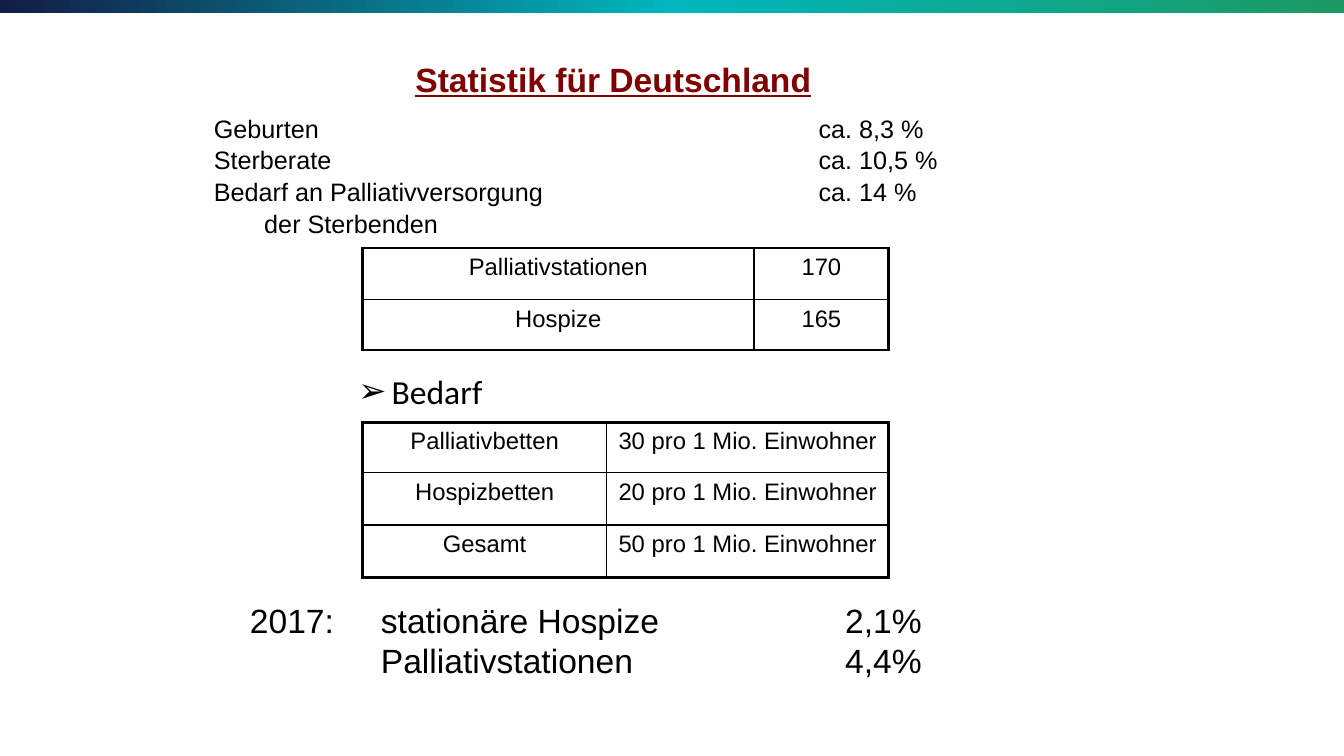
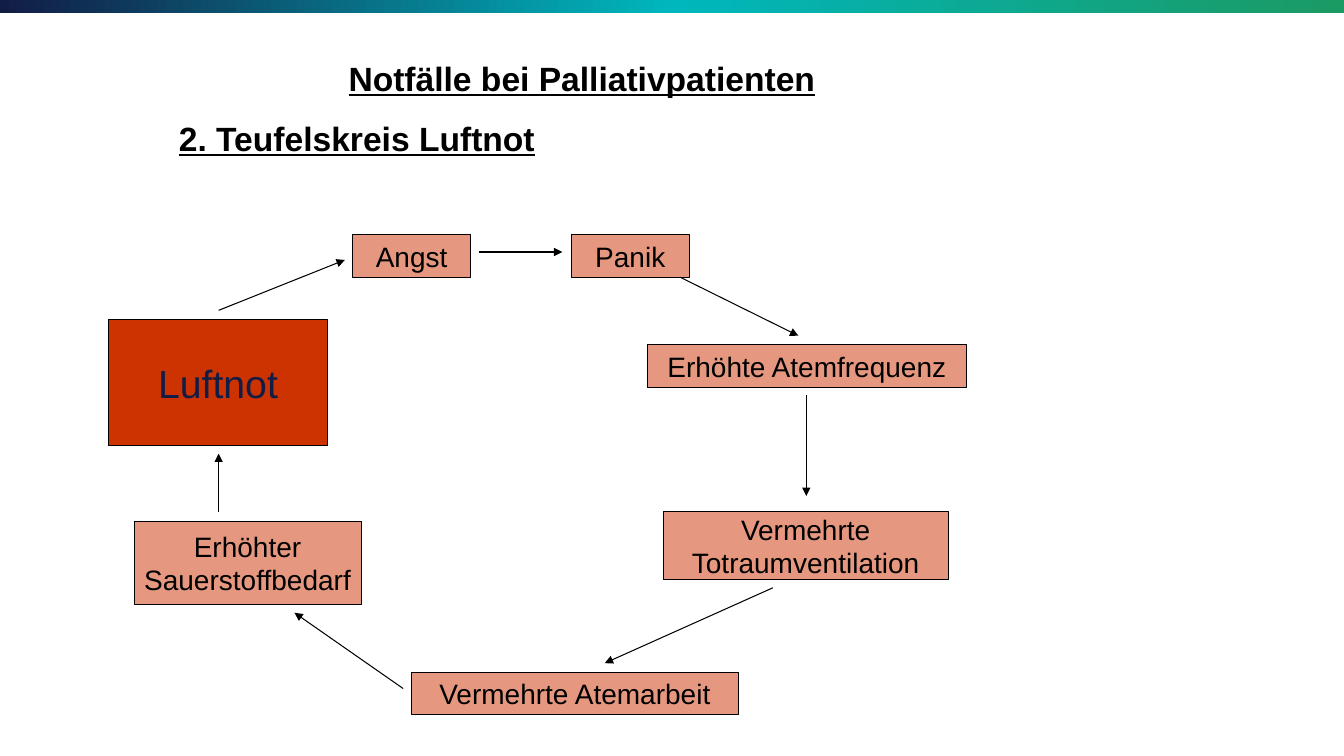
import copy

import lxml.etree
import pptx
import pptx.dml.color
import pptx.enum.shapes
import pptx.enum.text
import pptx.oxml.ns
import pptx.util

Cm = pptx.util.Cm
Pt = pptx.util.Pt
RGBColor = pptx.dml.color.RGBColor
qn = pptx.oxml.ns.qn
ALIGN = pptx.enum.text.PP_ALIGN
RECTANGLE = pptx.enum.shapes.MSO_SHAPE.RECTANGLE

BLACK = RGBColor(0x00, 0x00, 0x00)
MAROON = RGBColor(0x80, 0x00, 0x00)
NAVY = RGBColor(0x12, 0x1D, 0x46)
TURQUOISE = RGBColor(0x00, 0xB7, 0xBD)
GREEN = RGBColor(0x1B, 0x9A, 0x63)
RED = RGBColor(0xCC, 0x33, 0x00)

SLIDE_WIDTH = Cm(33.87)
INSET = Cm(0.13)
THIN, THICK = Pt(1), Pt(2.25)


def add_child(parent, tag, **attributes):
    child = lxml.etree.SubElement(parent, qn(tag))
    for name, value in attributes.items():
        child.set(name, str(value))
    return child


def add_text(slide, left, top, width, height, lines, size, color=BLACK,
             font="Arial", tabs=(), bullet=None, hanging=0):
    box = slide.shapes.add_textbox(Cm(left), Cm(top), Cm(width), Cm(height))
    frame = box.text_frame
    frame.word_wrap = True
    frame.margin_left = frame.margin_right = INSET
    frame.margin_top = frame.margin_bottom = INSET
    frame.text = "\n".join(lines)
    for paragraph in frame.paragraphs:
        properties = paragraph._p.get_or_add_pPr()
        if bullet:
            properties.set("marL", str(Cm(hanging)))
            properties.set("indent", str(-Cm(hanging)))
            add_child(properties, "a:buFont", typeface="Arial")
            add_child(properties, "a:buChar", char=bullet)
        if tabs:
            tab_list = add_child(properties, "a:tabLst")
            for position in tabs:
                add_child(tab_list, "a:tab", pos=Cm(position), algn="l")
        paragraph.font.name = font
        paragraph.font.size = Pt(size)
        paragraph.font.color.rgb = color
    return frame.paragraphs


presentation = pptx.Presentation()
presentation.slide_width = SLIDE_WIDTH
presentation.slide_height = Cm(19.05)
blank_layout = presentation.slide_layouts[6]
statistics_slide = presentation.slides.add_slide(blank_layout)
cycle_slide = presentation.slides.add_slide(blank_layout)

for slide in (statistics_slide, cycle_slide):
    band = slide.shapes.add_shape(RECTANGLE, 0, 0, SLIDE_WIDTH, Cm(0.33))
    band.shadow.inherit = False
    band.line.fill.background()
    band.fill.gradient()
    band.fill.gradient_angle = 0
    stop_list = band._element.spPr.find(".//" + qn("a:gsLst"))
    stop_list.insert(1, copy.deepcopy(stop_list[0]))
    for index, color in enumerate((NAVY, TURQUOISE, GREEN)):
        stop = band.fill.gradient_stops[index]
        stop.color.rgb = color
        stop.position = index / 2

headings = [
    (statistics_slide, 10.34, 1.35, 19.9, "Statistik für Deutschland", MAROON, ALIGN.LEFT),
    (cycle_slide, 2.18, 1.32, 24.97, "Notfälle bei Palliativpatienten", BLACK, ALIGN.CENTER),
    (cycle_slide, 4.38, 2.84, 23.9, "2. Teufelskreis Luftnot", BLACK, ALIGN.LEFT),
]
for slide, left, top, width, text, color, alignment in headings:
    paragraph = add_text(slide, left, top, width, 1.27, [text], 24, color)[0]
    paragraph.alignment = alignment
    paragraph.font.bold = True
    paragraph.font.underline = True

rates = add_text(statistics_slide, 5.26, 2.72, 24.97, 3.2, [
    "Geburten\tca. 8,3 %",
    "Sterberate\tca. 10,5 %",
    "Bedarf an Palliativversorgung\tca. 14 %",
    "der Sterbenden",
], 18, tabs=[15.24])
for paragraph in rates[1:]:
    paragraph.space_before = Pt(1)
rates[-1]._p.get_or_add_pPr().set("marL", str(Cm(1.27)))

add_text(statistics_slide, 8.9, 9.22, 4, 1.27, ["Bedarf"], 24,
         font="Calibri", bullet="➢", hanging=0.84)
add_text(statistics_slide, 6.17, 14.99, 19, 2.31, [
    "2017:\tstationäre Hospize\t2,1%",
    "\tPalliativstationen\t4,4%",
], 24, tabs=[3.3, 15])

tables = [
    (6.25, [9.86, 3.4], [1.3, 1.27],
     [["Palliativstationen", "170"], ["Hospize", "165"]], {(0, 1, "a:lnT")}),
    (10.64, [6.15, 7.11], [1.27, 1.32, 1.32],
     [["Palliativbetten", "30 pro 1 Mio. Einwohner"],
      ["Hospizbetten", "20 pro 1 Mio. Einwohner"],
      ["Gesamt", "50 pro 1 Mio. Einwohner"]], set()),
]
for top, widths, heights, rows, thin_edges in tables:
    table = statistics_slide.shapes.add_table(
        len(rows), len(widths), Cm(9.14), Cm(top), Cm(sum(widths)), Cm(sum(heights))).table
    table.first_row = False
    table.horz_banding = False
    for column, width in zip(table.columns, widths):
        column.width = Cm(width)
    for row, height in zip(table.rows, heights):
        row.height = Cm(height)
    for row_index, row in enumerate(rows):
        for column_index, text in enumerate(row):
            cell = table.cell(row_index, column_index)
            cell.text = text
            cell.margin_left = cell.margin_right = Cm(0.2)
            cell.margin_top = cell.margin_bottom = Cm(0.1)
            paragraph = cell.text_frame.paragraphs[0]
            paragraph.alignment = ALIGN.CENTER
            paragraph.line_spacing = 1.07
            paragraph.font.name = "Arial"
            paragraph.font.size = Pt(17)
            paragraph.font.color.rgb = BLACK
            outer_edges = {
                "a:lnL": column_index == 0,
                "a:lnR": column_index == len(widths) - 1,
                "a:lnT": row_index == 0,
                "a:lnB": row_index == len(rows) - 1,
            }
            for edge, is_outer in outer_edges.items():
                is_thick = is_outer and (row_index, column_index, edge) not in thin_edges
                border = add_child(cell._tc.get_or_add_tcPr(), edge,
                                   w=THICK if is_thick else THIN)
                add_child(add_child(border, "a:solidFill"), "a:srgbClr", val=BLACK)
            cell.fill.background()

stations = [
    ("Luftnot", 2.74, 8.05, 5.51, 3.18),
    ("Angst", 8.89, 5.92, 2.97, 1.07),
    ("Panik", 14.4, 5.92, 2.97, 1.07),
    ("Erhöhte Atemfrequenz", 16.31, 8.69, 8.05, 1.07),
    ("Vermehrte\nTotraumventilation", 16.71, 12.9, 7.19, 1.7),
    ("Vermehrte Atemarbeit", 10.36, 16.94, 8.26, 1.07),
    ("Erhöhter\nSauerstoffbedarf", 3.38, 13.13, 5.72, 2.11),
]
for text, left, top, width, height in stations:
    is_start = text == "Luftnot"
    station = cycle_slide.shapes.add_shape(
        RECTANGLE, Cm(left), Cm(top), Cm(width), Cm(height))
    station.shadow.inherit = False
    station.fill.solid()
    station.fill.fore_color.rgb = RED
    if not is_start:
        fill_color = station._element.spPr.find(qn("a:solidFill") + "/" + qn("a:srgbClr"))
        add_child(fill_color, "a:alpha", val=50000)
    station.line.color.rgb = BLACK
    station.line.width = Pt(0.75)
    frame = station.text_frame
    frame.word_wrap = False
    frame.vertical_anchor = pptx.enum.text.MSO_ANCHOR.MIDDLE
    frame.text = text
    for paragraph in frame.paragraphs:
        paragraph.alignment = ALIGN.CENTER
        paragraph.font.name = "Arial"
        paragraph.font.size = Pt(28 if is_start else 20)
        paragraph.font.color.rgb = NAVY if is_start else BLACK

arrows = [
    (5.51, 7.82, 8.69, 6.55),
    (12.07, 6.35, 14.17, 6.35),
    (17.15, 6.99, 20.12, 8.46),
    (20.32, 9.96, 20.32, 12.5),
    (19.48, 14.81, 15.24, 16.71),
    (10.16, 17.35, 7.42, 15.44),
    (5.51, 12.9, 5.51, 11.43),
]
for ends in arrows:
    arrow = cycle_slide.shapes.add_connector(
        pptx.enum.shapes.MSO_CONNECTOR.STRAIGHT, *[Cm(value) for value in ends])
    arrow.line.color.rgb = BLACK
    arrow.line.width = Pt(0.75)
    add_child(arrow.line._get_or_add_ln(), "a:tailEnd", type="triangle")
    add_child(arrow._element.spPr, "a:effectLst")

presentation.save("out.pptx")
